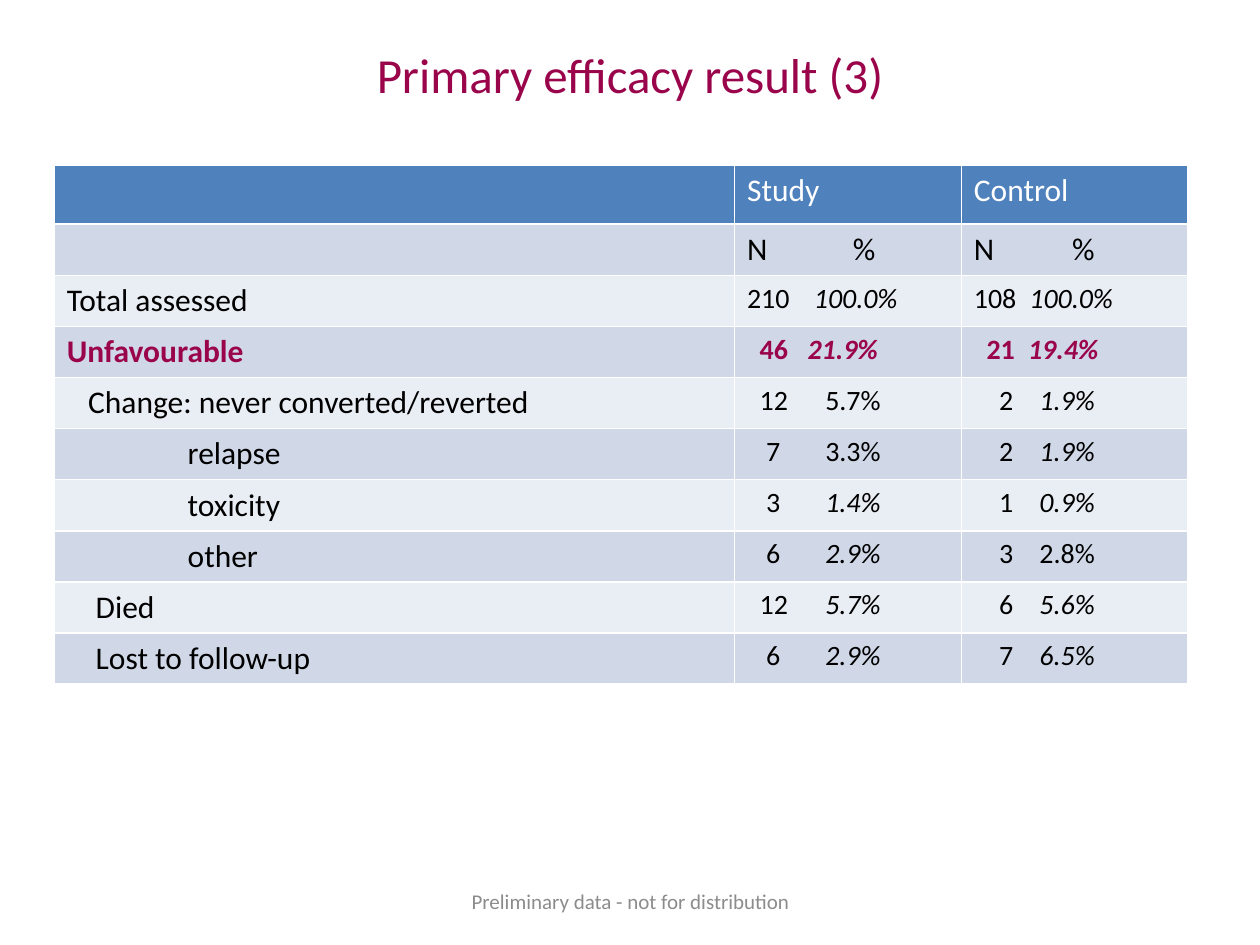
import dataclasses

import pptx
import pptx.dml.color
import pptx.enum.text
import pptx.oxml
import pptx.oxml.ns
import pptx.util

Inches = pptx.util.Inches


@dataclasses.dataclass(frozen=True)
class Theme:
    font: str = "Calibri"
    accent: str = "9A044B"
    header: str = "4F81BD"
    bands: tuple = ("D0D8E8", "E9EDF4")
    white: str = "FFFFFF"
    ink: str = "000000"
    muted: str = "8C8C8C"
    title_size: int = 28
    label_size: int = 18
    value_size: int = 16
    footer_size: int = 12


@dataclasses.dataclass(frozen=True)
class Arm:
    name: str
    count_stops: dict
    percent_stops: dict


THEME = Theme()
ARMS = (
    Arm("Study", {1: 0.15, 2: 0.1, 3: 0},
        {"heading": 0.84, "total": 0.53, "key": 0.48, "part": 0.62}),
    Arm("Control", {1: 0.2, 2: 0.1, 3: 0},
        {"heading": 0.78, "total": 0.44, "key": 0.43, "part": 0.52}),
)
UPRIGHT, ITALIC = False, True
RESULTS = (
    ("total", "Total assessed", 0,
     ("210", "100.0%", ITALIC), ("108", "100.0%", ITALIC)),
    ("key", "Unfavourable", 0,
     ("46", "21.9%", ITALIC), ("21", "19.4%", ITALIC)),
    ("part", "Change: never converted/reverted", 0.17,
     ("12", "5.7%", UPRIGHT), ("2", "1.9%", ITALIC)),
    ("part", "relapse", 0.96,
     ("7", "3.3%", UPRIGHT), ("2", "1.9%", ITALIC)),
    ("part", "toxicity", 0.96,
     ("3", "1.4%", ITALIC), ("1", "0.9%", ITALIC)),
    ("part", "other", 0.96,
     ("6", "2.9%", ITALIC), ("3", "2.8%", UPRIGHT)),
    ("part", "Died", 0.23,
     ("12", "5.7%", ITALIC), ("6", "5.6%", ITALIC)),
    ("part", "Lost to follow-up", 0.23,
     ("6", "2.9%", ITALIC), ("7", "6.5%", ITALIC)),
)


def rgb(color):
    return pptx.dml.color.RGBColor.from_string(color)


def format_span(span, size, color, bold=False, italic=False):
    span.font.name = THEME.font
    span.font.size = pptx.util.Pt(size)
    span.font.color.rgb = rgb(color)
    span.font.bold = bold
    span.font.italic = italic


def add_caption(page, box, text, size, color, anchor):
    frame = page.shapes.add_textbox(*map(Inches, box)).text_frame
    frame.word_wrap = True
    frame.vertical_anchor = anchor
    frame.text = text
    para = frame.paragraphs[0]
    para.alignment = pptx.enum.text.PP_ALIGN.CENTER
    format_span(para.runs[0], size, color)


def style_cell(cell, fill):
    properties = cell._tc.get_or_add_tcPr()
    for side in "LRTB":
        properties.append(pptx.oxml.parse_xml(
            f'<a:ln{side} {pptx.oxml.ns.nsdecls("a")} w="12700"><a:solidFill>'
            f'<a:srgbClr val="{THEME.white}"/></a:solidFill></a:ln{side}>'))
    cell.fill.solid()
    cell.fill.fore_color.rgb = rgb(fill)


def set_label(cell, text, color, bold=False, indent=0):
    cell.text_frame.text = text
    para = cell.text_frame.paragraphs[0]
    format_span(para.runs[0], THEME.label_size, color, bold)
    if indent:
        properties = para._p.get_or_add_pPr()
        properties.set("marL", str(Inches(indent)))
        properties.set("indent", "0")


def set_tab_stops(para, stops):
    tabs = "".join(f'<a:tab pos="{Inches(stop)}" algn="l"/>' for stop in stops)
    para._p.get_or_add_pPr().append(pptx.oxml.parse_xml(
        f'<a:tabLst {pptx.oxml.ns.nsdecls("a")}>{tabs}</a:tabLst>'))


def set_result(cell, arm, kind, result, color):
    count, percent, italic = result
    count_stop = arm.count_stops[len(count)]
    para = cell.text_frame.paragraphs[0]
    lead = "\t" if count_stop else ""
    for text, slanted in ((f"{lead}{count}\t", False), (percent, italic)):
        span = para.add_run()
        span.text = text
        format_span(span, THEME.value_size, color, kind == "key", slanted)
    stops = (count_stop, arm.percent_stops[kind])
    set_tab_stops(para, [stop for stop in stops if stop])


def add_results_table(page, box):
    left, top, width, height = box
    header_height = 0.47
    row_count = len(RESULTS) + 2
    table = page.shapes.add_table(
        row_count, len(ARMS) + 1, *map(Inches, box)).table
    table.first_row = False
    table.horz_banding = False
    for column, share in zip(table.columns, (0.6, 0.2, 0.2)):
        column.width = Inches(width * share)
    for index, row in enumerate(table.rows):
        row.height = Inches((height - header_height) / (row_count - 1)
                            if index else header_height)
        for cell in row.cells:
            style_cell(cell, THEME.bands[(index - 1) % 2]
                       if index else THEME.header)

    for column, arm in enumerate(ARMS, start=1):
        set_label(table.cell(0, column), arm.name, THEME.white)
        heading = table.cell(1, column)
        set_label(heading, "N\t%", THEME.ink)
        set_tab_stops(heading.text_frame.paragraphs[0],
                      [arm.percent_stops["heading"]])

    for index, (kind, label, indent, *results) in enumerate(RESULTS, start=2):
        color = THEME.accent if kind == "key" else THEME.ink
        set_label(table.cell(index, 0), label, color, kind == "key", indent)
        for column, (arm, result) in enumerate(zip(ARMS, results), start=1):
            set_result(table.cell(index, column), arm, kind, result, color)


def main():
    deck = pptx.Presentation()
    deck.slide_width = Inches(10)
    deck.slide_height = Inches(7.5)
    page = deck.slides.add_slide(deck.slide_layouts[6])
    anchors = pptx.enum.text.MSO_ANCHOR
    add_caption(page, (0.5, 0.3, 9, 1.25), "Primary efficacy result (3)",
                THEME.title_size, THEME.accent, anchors.TOP)
    add_results_table(page, (0.43, 1.31, 9, 4.12))
    add_caption(page, (3.42, 6.95, 3.17, 0.4),
                "Preliminary data - not for distribution",
                THEME.footer_size, THEME.muted, anchors.MIDDLE)
    deck.save("out.pptx")


if __name__ == "__main__":
    main()
